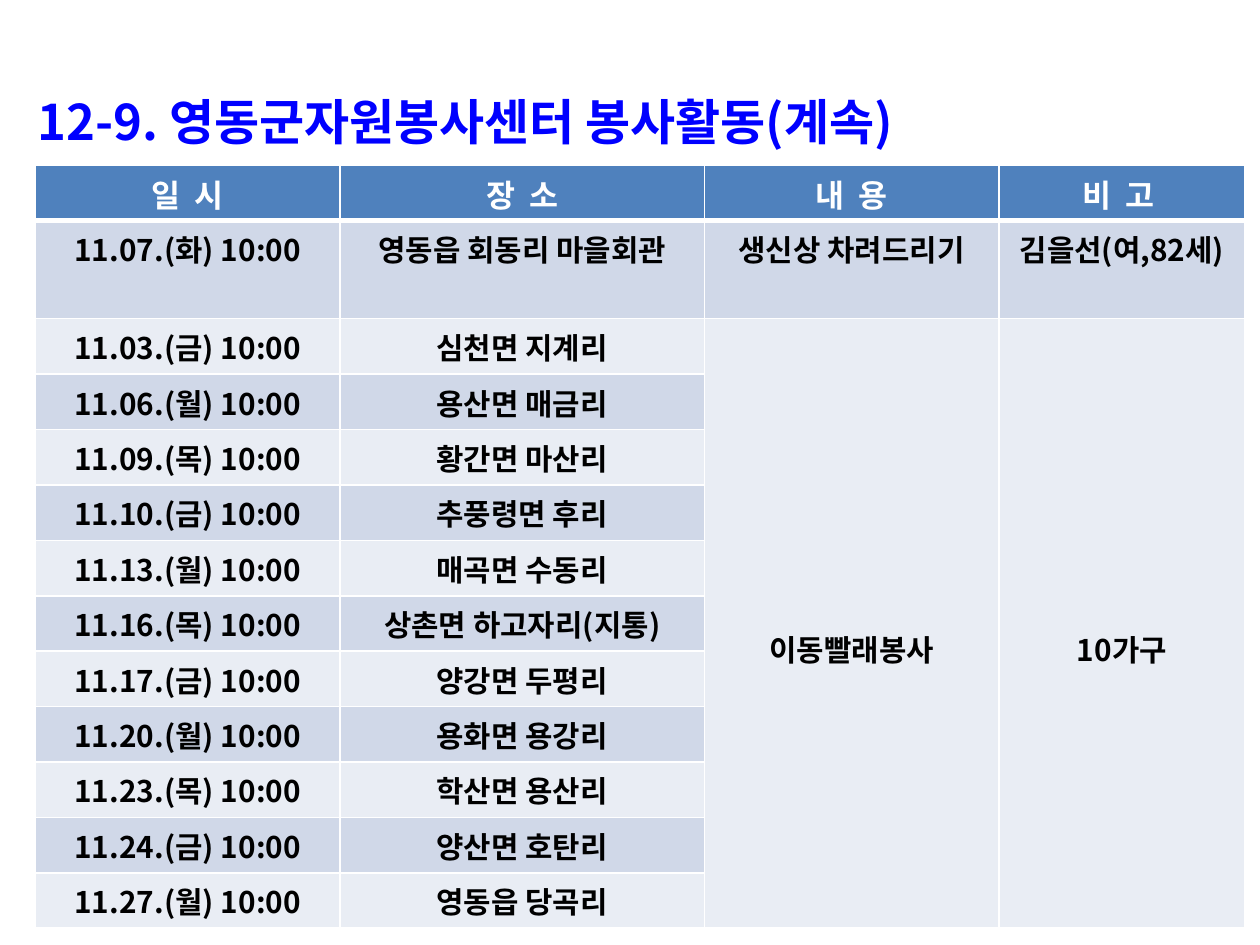
from dataclasses import dataclass

from lxml import etree
from pptx import Presentation
from pptx.dml.color import RGBColor
from pptx.enum.text import MSO_ANCHOR, PP_ALIGN
from pptx.oxml.ns import qn
from pptx.table import _Cell
from pptx.text.text import Font
from pptx.util import Inches, Pt

CENTER = PP_ALIGN.CENTER
MIDDLE = MSO_ANCHOR.MIDDLE
KOREAN_FONT = "Noto Sans CJK KR"
WHITE = "FFFFFF"
BLACK = "000000"
TITLE_BLUE = "0000FF"
HEADER_BLUE = "4F81BD"
BANDS = ("D0D8E8", "E9EDF4")
COLUMN_WIDTHS = (2.42, 2.89, 2.34, 1.95)
ROW_HEIGHT = 0.44
TALL_ROW_HEIGHT = 0.78
HEADERS = ("일  시", "장  소", "내  용", "비  고 ")


@dataclass(frozen=True)
class Visit:
    date: str
    place: str
    activity: str = ""
    note: str = ""


@dataclass(frozen=True)
class CellStyle:
    fill: str
    color: str
    size: int
    font: str
    top: int = 1
    bottom: int = 1


VISITS = (
    Visit("11.07.(화)", "영동읍 회동리 마을회관", "생신상 차려드리기", "김을선(여,82세)"),
    Visit("11.03.(금)", "심천면 지계리", "이동빨래봉사", "10가구"),
    Visit("11.06.(월)", "용산면 매금리"),
    Visit("11.09.(목)", "황간면 마산리"),
    Visit("11.10.(금)", "추풍령면 후리"),
    Visit("11.13.(월)", "매곡면 수동리"),
    Visit("11.16.(목)", "상촌면 하고자리(지통)"),
    Visit("11.17.(금)", "양강면 두평리"),
    Visit("11.20.(월)", "용화면 용강리"),
    Visit("11.23.(목)", "학산면 용산리"),
    Visit("11.24.(금)", "양산면 호탄리"),
    Visit("11.27.(월)", "영동읍 당곡리"),
)


def rgb(value: str) -> RGBColor:
    return RGBColor.from_string(value)


def set_font(font: Font, name: str, size: int, color: str) -> None:
    font.name = name
    font.size = Pt(size)
    font.bold = True
    font.color.rgb = rgb(color)


def set_borders(cell: _Cell, top: int, bottom: int) -> None:
    properties = cell._tc.get_or_add_tcPr()
    for side, width in (("L", 1), ("R", 1), ("T", top), ("B", bottom)):
        line = etree.SubElement(properties, qn(f"a:ln{side}"), w=str(Pt(width)))
        fill = etree.SubElement(line, qn("a:solidFill"))
        etree.SubElement(fill, qn("a:srgbClr"), val=WHITE)


def fill_cell(cell: _Cell, text: str, style: CellStyle) -> None:
    set_borders(cell, style.top, style.bottom)
    cell.fill.solid()
    cell.fill.fore_color.rgb = rgb(style.fill)
    paragraph = cell.text_frame.paragraphs[0]
    paragraph.text = text
    paragraph.alignment = CENTER
    set_font(paragraph.font, style.font, style.size, style.color)


def add_title(page) -> None:
    box = page.shapes.add_textbox(Inches(0.2), Inches(0.44), Inches(10), Inches(5.94))
    box.text_frame.word_wrap = False
    paragraph = box.text_frame.paragraphs[0]
    paragraph.text = "12-9. 영동군자원봉사센터 봉사활동(계속)"
    paragraph.line_spacing = 1.5
    set_font(paragraph.font, KOREAN_FONT, 28, TITLE_BLUE)


def add_schedule(page) -> None:
    row_count = len(VISITS) + 1
    height = ROW_HEIGHT * len(VISITS) + TALL_ROW_HEIGHT
    table = page.shapes.add_table(
        row_count, len(HEADERS), Inches(0.28), Inches(1.31),
        Inches(sum(COLUMN_WIDTHS)), Inches(height),
    ).table
    for column, width in zip(table.columns, COLUMN_WIDTHS):
        column.width = Inches(width)
    for row in table.rows:
        row.height = Inches(ROW_HEIGHT)
    table.rows[1].height = Inches(TALL_ROW_HEIGHT)

    header_style = CellStyle(HEADER_BLUE, WHITE, 18, "Arial", bottom=3)
    for column, text in enumerate(HEADERS):
        fill_cell(table.cell(0, column), text, header_style)

    for index, visit in enumerate(VISITS):
        top = 3 if index == 0 else 1
        style = CellStyle(BANDS[index % 2], BLACK, 17, KOREAN_FONT, top=top)
        texts = (f"{visit.date} 10:00", visit.place, visit.activity, visit.note)
        for column, text in enumerate(texts):
            fill_cell(table.cell(index + 1, column), text, style)

    for column in (2, 3):
        shared = table.cell(2, column)
        shared.merge(table.cell(row_count - 1, column))
        shared.vertical_anchor = MIDDLE
        shared.margin_top = Inches(0.45)


def main() -> None:
    deck = Presentation()
    deck.slide_width = Inches(10)
    deck.slide_height = Inches(7.5)
    page = deck.slides.add_slide(deck.slide_layouts[6])
    add_title(page)
    add_schedule(page)
    deck.save("out.pptx")


if __name__ == "__main__":
    main()
